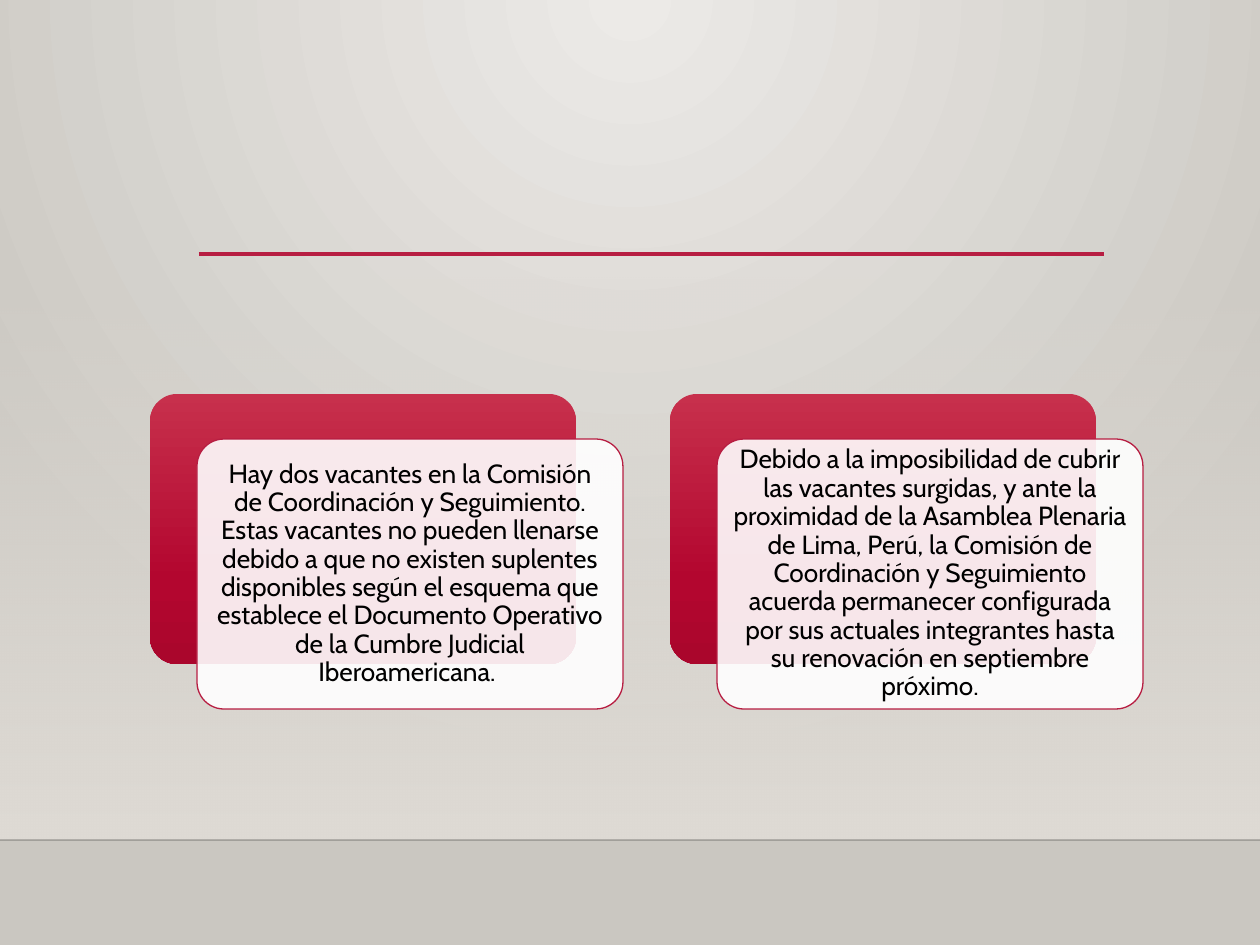
from lxml import etree
from pptx import Presentation
from pptx import util as u
from pptx.dml.color import RGBColor
from pptx.enum import shapes, text
from pptx.oxml.ns import qn

PX = 914400 // 126  # EMU per px
RED = RGBColor(0xB7, 0x1E, 0x42)
WHITE = RGBColor(0xFF, 0xFF, 0xFF)
BLACK = RGBColor(0, 0, 0)

# Gradient stops: position %, colour, opacity %
BACKDROP = [(0, "ECEAE7", 100), (100, "CAC7C1", 100)]
WALL = [(0, "DFDBD5", 0), (100, "DFDBD5", 100)]
CARD = [(0, "C7304C", 100), (69, "B3062F", 100), (100, "AA062C", 100)]

NOTES = [
    "Hay dos vacantes en la Comisión de Coordinación y Seguimiento. "
    "Estas vacantes no pueden llenarse debido a que no existen suplentes "
    "disponibles según el esquema que establece el Documento Operativo "
    "de la Cumbre Judicial Iberoamericana. ",
    "Debido a la imposibilidad de cubrir las vacantes surgidas, y ante la "
    "proximidad de la Asamblea Plenaria de Lima, Perú, la Comisión de "
    "Coordinación y Seguimiento acuerda permanecer configurada por sus "
    "actuales integrantes hasta su renovación en septiembre próximo.",
]
LEFT, TOP, WIDTH, HEIGHT = 150, 394, 426, 270
PITCH, SHIFT_X, SHIFT_Y, PAD, INSET = 520, 47, 45, 8, 7

FRAME = dict(word_wrap=True, vertical_anchor=text.MSO_ANCHOR.MIDDLE,
             **{f"margin_{side}": INSET * PX for side in ("left", "top", "right", "bottom")})
PARAGRAPH = dict(alignment=text.PP_ALIGN.CENTER, line_spacing=0.9, space_after=u.Pt(5))
FONT = dict(name="Cabin", size=u.Pt(15))


def px(*lengths):
    return [length * PX for length in lengths]


def assign(target, values):
    for name, value in values.items():
        setattr(target, name, value)


def set_alpha(owner, percent):
    """Make every solid colour inside the owner element translucent."""
    for colour in owner.iter(qn("a:srgbClr")):
        etree.SubElement(colour, qn("a:alpha"), val=str(percent * 1000))


def set_gradient(fill, owner, stops, radial=False):
    """Swap the owner's fill for a gradient, vertical or spreading from the top centre."""
    fill.solid()
    fill.fore_color.rgb = WHITE
    solid = next(owner.iter(qn("a:solidFill")))
    gradient = etree.Element(qn("a:gradFill"), rotWithShape="1")
    stop_list = etree.SubElement(gradient, qn("a:gsLst"))
    for position, colour, opacity in stops:
        stop = etree.SubElement(stop_list, qn("a:gs"), pos=str(position * 1000))
        tint = etree.SubElement(stop, qn("a:srgbClr"), val=colour)
        if opacity < 100:
            etree.SubElement(tint, qn("a:alpha"), val=str(opacity * 1000))
    if radial:
        centre = etree.SubElement(gradient, qn("a:path"), path="circle")
        etree.SubElement(centre, qn("a:fillToRect"), l="43000", t="0", r="43000", b="100000")
    else:
        etree.SubElement(gradient, qn("a:lin"), ang="5400000", scaled="0")
    solid.getparent().replace(solid, gradient)


def add_box(page, kind, *place):
    box = page.shapes.add_shape(kind, *px(*place))
    box.shadow.inherit = False
    if kind == shapes.MSO_SHAPE.ROUNDED_RECTANGLE:
        box.adjustments[0] = 0.1
    return box


def add_rule(page, left, right, y, colour, width):
    rule = page.shapes.add_connector(shapes.MSO_CONNECTOR.STRAIGHT, *px(left, y, right, y))
    rule.line.color.rgb = colour
    rule.line.width = u.Pt(width)
    properties = rule.element.spPr
    etree.SubElement(properties, qn("a:effectLst"))
    return properties


def add_note(page, left, words):
    """Red card, translucent white card over its lower right, and the text."""
    rounded = shapes.MSO_SHAPE.ROUNDED_RECTANGLE
    back = add_box(page, rounded, left, TOP, WIDTH, HEIGHT)
    set_gradient(back.fill, back.element.spPr, CARD)
    back.line.fill.background()

    x, y = left + SHIFT_X, TOP + SHIFT_Y
    front = add_box(page, rounded, x, y, WIDTH, HEIGHT)
    front.fill.solid()
    front.fill.fore_color.rgb = WHITE
    set_alpha(front.element.spPr, 90)
    front.line.color.rgb = RED
    front.line.width = u.Pt(0.75)

    label = page.shapes.add_textbox(
        *px(x + PAD, y + PAD, WIDTH - 2 * PAD, HEIGHT - 2 * PAD))
    assign(label.text_frame, FRAME)
    para = label.text_frame.paragraphs[0]
    assign(para, PARAGRAPH)
    span = para.add_run()
    span.text = words
    assign(span.font, FONT)
    span.font.color.rgb = BLACK


def main():
    deck = Presentation()
    deck.slide_width, deck.slide_height = px(1260, 945)
    page = deck.slides.add_slide(deck.slide_layouts[6])
    set_gradient(page.background.fill, page.element, BACKDROP, radial=True)

    wall = add_box(page, shapes.MSO_SHAPE.RECTANGLE, 0, 277, 1260, 563)
    set_gradient(wall.fill, wall.element.spPr, WALL)
    wall.line.fill.background()
    set_alpha(add_rule(page, 0, 1260, 840, BLACK, 1), 20)
    add_rule(page, 199, 1104, 254, RED, 2.5)

    for index, words in enumerate(NOTES):
        add_note(page, LEFT + index * PITCH, words)
    deck.save("out.pptx")


if __name__ == "__main__":
    main()
